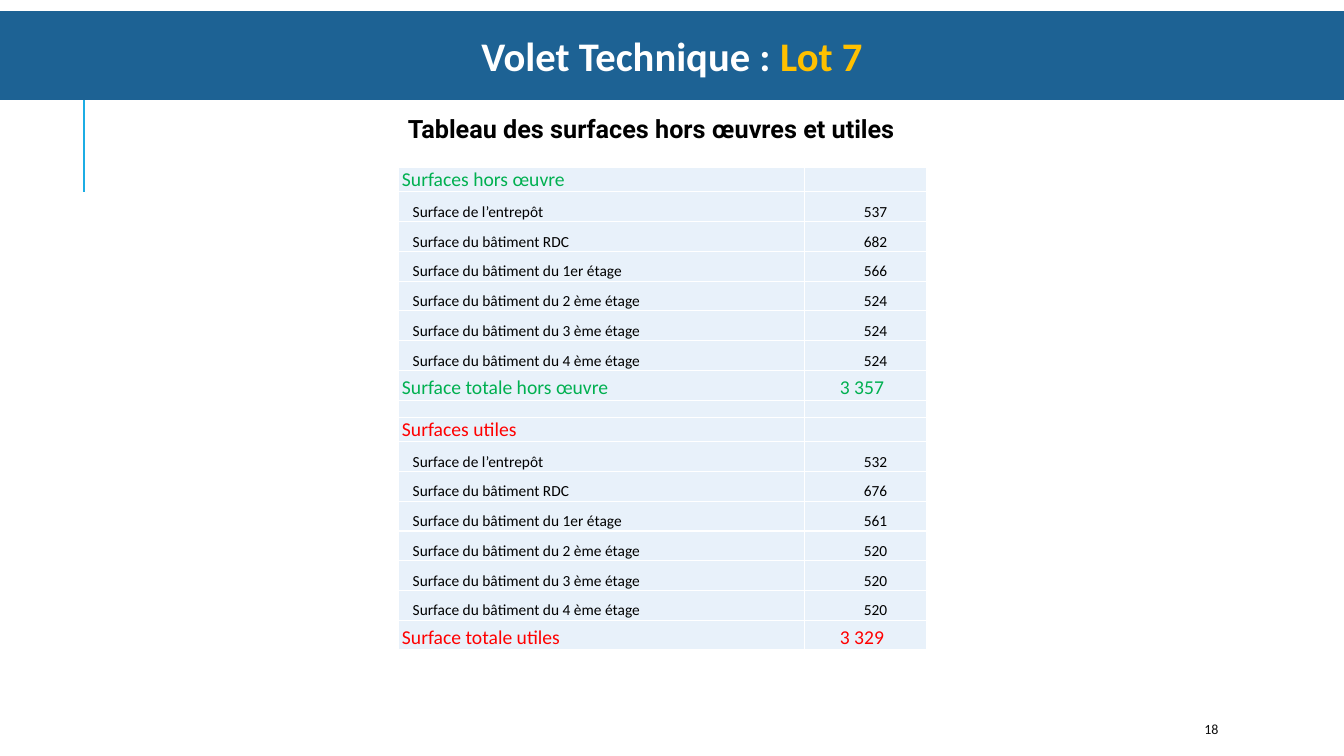
"""Build the slide of gross and usable floor areas for lot 7."""
from dataclasses import dataclass

from lxml.etree import SubElement
from pptx import Presentation
from pptx.dml.color import RGBColor
from pptx.enum.shapes import MSO_CONNECTOR
from pptx.enum.text import MSO_ANCHOR, MSO_AUTO_SIZE, PP_ALIGN
from pptx.oxml.ns import qn
from pptx.util import Cm, Pt

WHITE = RGBColor(0xFF, 0xFF, 0xFF)
BLACK = RGBColor(0x00, 0x00, 0x00)
NEAR_BLACK = RGBColor(0x0D, 0x0D, 0x0D)
BAND_BLUE = RGBColor(0x1D, 0x62, 0x94)
RULE_BLUE = RGBColor(0x1C, 0xAD, 0xE4)
PALE_BLUE = RGBColor(0xE8, 0xF1, 0xFA)
GOLD = RGBColor(0xFF, 0xC0, 0x00)
GREEN = RGBColor(0x00, 0xB0, 0x50)
RED = RGBColor(0xFF, 0x00, 0x00)

LEVELS = (
    "Surface de l’entrepôt",
    "Surface du bâtiment RDC",
    "Surface du bâtiment du 1er étage",
    "Surface du bâtiment du 2 ème étage",
    "Surface du bâtiment du 3 ème étage",
    "Surface du bâtiment du 4 ème étage",
)
COLUMN_WIDTHS = (10.24, 3.07)


@dataclass(frozen=True)
class AreaGroup:
    heading: str
    areas: tuple[int, ...]
    total_label: str
    total: str
    color: RGBColor


@dataclass(frozen=True)
class AreaRow:
    label: str = ""
    value: str = ""
    height: float = 0.75
    size: float = 11
    color: RGBColor = BLACK
    indent: float = 0.37
    value_margin: float = 0.98


GROUPS = (
    AreaGroup("Surfaces hors œuvre", (537, 682, 566, 524, 524, 524),
              "Surface totale hors œuvre", "3 357", GREEN),
    AreaGroup("Surfaces utiles", (532, 676, 561, 520, 520, 520),
              "Surface totale utiles", "3 329", RED),
)


def group_rows(group: AreaGroup) -> list[AreaRow]:
    """Return the heading, detail and total rows of one group."""
    heading = AreaRow(group.heading, "", 0.61, 14, group.color, 0.1)
    details = [AreaRow(level, str(area)) for level, area in zip(LEVELS, group.areas)]
    total = AreaRow(group.total_label, group.total, 0.75, 14, group.color, 0.1, 1.06)
    return [heading, *details, total]


def format_run(run, font_name: str, size: float, color: RGBColor, bold: bool = False) -> None:
    """Set the typeface, size, colour and weight of a run."""
    run.font.name = font_name
    run.font.size = Pt(size)
    run.font.color.rgb = color
    run.font.bold = bold


def add_label(slide, text: str, box: tuple[float, ...], font_name: str, size: float,
              color: RGBColor, bold: bool, anchor: MSO_ANCHOR) -> None:
    """Add a left-aligned line of text."""
    frame = slide.shapes.add_textbox(*map(Cm, box)).text_frame
    frame.word_wrap = True
    frame.vertical_anchor = anchor
    frame.text = text
    format_run(frame.paragraphs[0].runs[0], font_name, size, color, bold)


def add_borders(cell) -> None:
    """Draw thin white borders around a cell."""
    properties = cell._tc.get_or_add_tcPr()
    for side in ("a:lnL", "a:lnR", "a:lnT", "a:lnB"):
        border = SubElement(properties, qn(side), w=str(Pt(1)))
        fill = SubElement(border, qn("a:solidFill"))
        SubElement(fill, qn("a:srgbClr"), val=str(WHITE))


def fill_cell(cell, text: str, row: AreaRow, align: PP_ALIGN,
              left: float, right: float) -> None:
    """Write and format one table cell."""
    add_borders(cell)
    cell.fill.solid()
    cell.fill.fore_color.rgb = PALE_BLUE
    cell.vertical_anchor = MSO_ANCHOR.BOTTOM
    cell.margin_left, cell.margin_right = Cm(left), Cm(right)
    cell.margin_top, cell.margin_bottom = Cm(0.02), Cm(0)
    cell.text_frame.text = text
    paragraph = cell.text_frame.paragraphs[0]
    paragraph.alignment = align
    for run in paragraph.runs:
        format_run(run, "Calibri", row.size, row.color)
    if not text:
        SubElement(paragraph._p, qn("a:endParaRPr"), sz=str(int(row.size * 100)))


def add_area_table(slide, rows: list[AreaRow]) -> None:
    """Add the table of floor areas."""
    height = sum(row.height for row in rows)
    table = slide.shapes.add_table(len(rows), 2, Cm(10.03), Cm(4.22),
                                   Cm(sum(COLUMN_WIDTHS)), Cm(height)).table
    table.first_row = table.horz_banding = False
    for column, width in zip(table.columns, COLUMN_WIDTHS):
        column.width = Cm(width)
    for index, row in enumerate(rows):
        table.rows[index].height = Cm(row.height)
        fill_cell(table.cell(index, 0), row.label, row, PP_ALIGN.LEFT, row.indent, 0.03)
        fill_cell(table.cell(index, 1), row.value, row, PP_ALIGN.RIGHT, 0.03, row.value_margin)


def add_title_band(slide) -> None:
    """Turn the title placeholder into the full-width band."""
    band = slide.shapes.title
    band.left, band.top, band.width, band.height = Cm(0), Cm(0.28), Cm(33.87), Cm(2.24)
    band.fill.solid()
    band.fill.fore_color.rgb = BAND_BLUE
    frame = band.text_frame
    frame.auto_size = MSO_AUTO_SIZE.NONE
    frame.vertical_anchor = MSO_ANCHOR.MIDDLE
    frame.text = "Volet Technique : "
    heading = frame.paragraphs[0]
    heading.alignment = PP_ALIGN.CENTER
    lot = heading.add_run()
    lot.text = "Lot 7"
    for run, color in zip(heading.runs, (WHITE, GOLD)):
        format_run(run, "Calibri", 29, color, True)


def add_side_rule(slide) -> None:
    """Add the vertical rule hanging from the band."""
    rule = slide.shapes.add_connector(MSO_CONNECTOR.STRAIGHT, Cm(2.12), Cm(4.83),
                                      Cm(2.12), Cm(2.52))
    rule.line.color.rgb = RULE_BLUE
    rule.line.width = Pt(1.5)
    SubElement(rule._element.spPr, qn("a:effectLst"))


def main() -> None:
    """Build and save the presentation."""
    presentation = Presentation()
    presentation.slide_width, presentation.slide_height = Cm(33.87), Cm(19.05)
    slide = presentation.slides.add_slide(presentation.slide_layouts[5])
    add_title_band(slide)
    add_side_rule(slide)
    add_label(slide, "18", (30.1, 17.98, 2.69, 0.76), "Calibri", 10,
              NEAR_BLACK, False, MSO_ANCHOR.MIDDLE)
    add_label(slide, "Tableau des surfaces hors œuvres et utiles", (10.03, 2.72, 13.79, 1.02),
              "Roboto", 18, BLACK, True, MSO_ANCHOR.TOP)
    gross, usable = map(group_rows, GROUPS)
    add_area_table(slide, [*gross, AreaRow(height=0.43, size=9), *usable])
    presentation.save("out.pptx")


if __name__ == "__main__":
    main()
